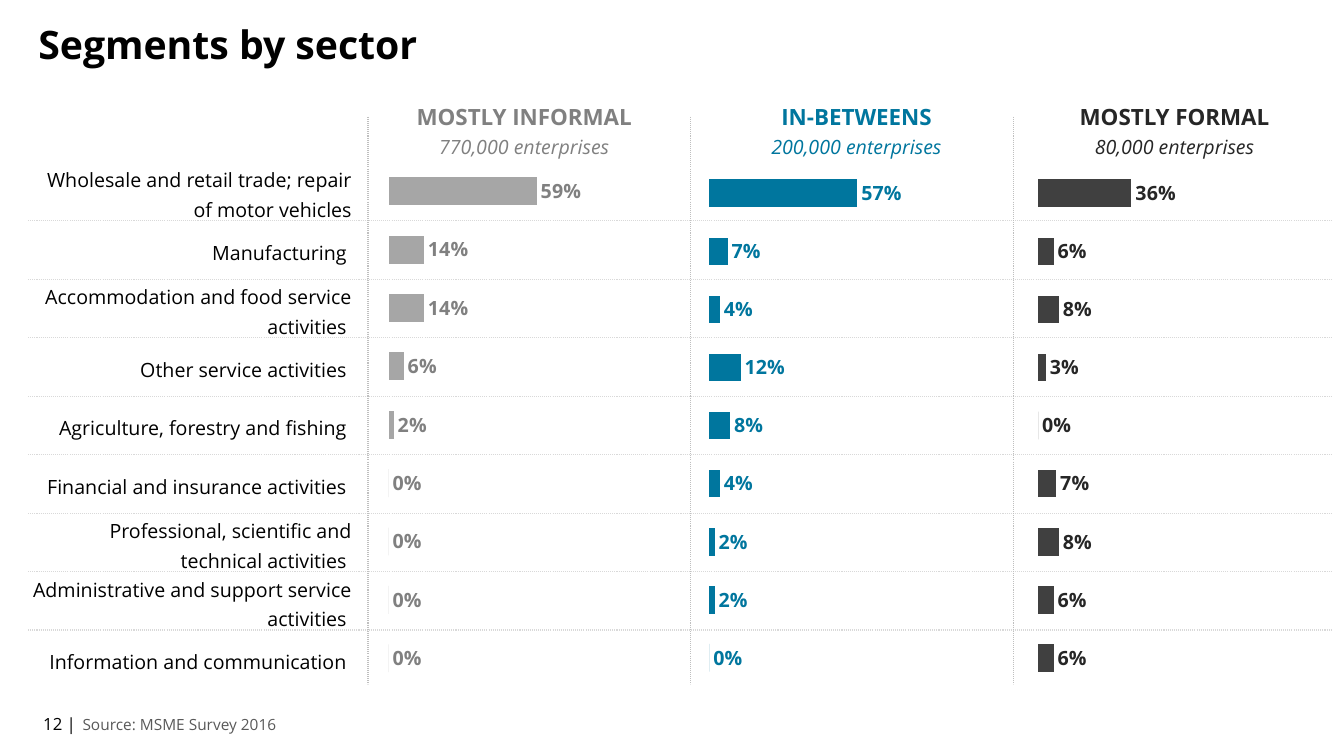
from dataclasses import dataclass

from lxml import etree
from pptx import Presentation
from pptx.chart.data import CategoryChartData
from pptx.dml.color import RGBColor
from pptx.enum.chart import XL_CHART_TYPE, XL_LABEL_POSITION
from pptx.enum.dml import MSO_LINE
from pptx.enum.shapes import MSO_CONNECTOR
from pptx.enum.text import MSO_ANCHOR, MSO_AUTO_SIZE, PP_ALIGN
from pptx.oxml import parse_xml
from pptx.oxml.ns import nsdecls, qn
from pptx.util import Inches, Pt

BAR = XL_CHART_TYPE.BAR_CLUSTERED
OUTSIDE_END = XL_LABEL_POSITION.OUTSIDE_END
DOTTED = MSO_LINE.ROUND_DOT
STRAIGHT = MSO_CONNECTOR.STRAIGHT
LEFT, CENTER, RIGHT = PP_ALIGN.LEFT, PP_ALIGN.CENTER, PP_ALIGN.RIGHT
TOP, MIDDLE = MSO_ANCHOR.TOP, MSO_ANCHOR.MIDDLE


@dataclass(frozen=True)
class Theme:
    font: str = "Open Sans"
    black: str = "000000"
    source: str = "595959"
    row_line: str = "D9D9D9"
    column_line: str = "BFBFBF"
    title_size: int = 28
    heading_size: int = 16
    body_size: int = 14
    page_size: int = 12
    source_size: int = 11
    chart_size: int = 10


theme = Theme()

SECTORS = [
    "Wholesale and retail trade; repair of motor vehicles",
    "Manufacturing ",
    "Accommodation and food service activities ",
    "Other service activities ",
    "Agriculture, forestry and fishing ",
    "Financial and insurance activities ",
    "Professional, scientific and technical activities ",
    "Administrative and support service activities ",
    "Information and communication ",
]
# Name, count, bar colour, text colour, heading (left, width),
# chart (left, top, width, height), plot area fractions, shares
SEGMENTS = [
    ("MOSTLY INFORMAL", "770,000 enterprises", "A6A6A6", "808080", (3.56, 3.28),
     (1.28, 1.31, 5.07, 5.63), (0.508, 0.053, 0.491, 0.926),
     (0.59, 0.14, 0.14, 0.06, 0.02, 0, 0, 0, 0)),
    ("IN-BETWEENS", "200,000 enterprises", "00769E", "00769E", (7.07, 2.85),
     (4.39, 1.35, 5.22, 5.6), (0.507, 0.05, 0.493, 0.926),
     (0.57, 0.07, 0.04, 0.12, 0.08, 0.04, 0.02, 0.02, 0)),
    ("MOSTLY FORMAL", "80,000 enterprises", "404040", "262626", (10.15, 3),
     (7.65, 1.35, 5.22, 5.6), (0.507, 0.05, 0.493, 0.926),
     (0.36, 0.06, 0.08, 0.03, 0, 0.07, 0.08, 0.06, 0.06)),
]
ROW_HEIGHT = 0.58


def style_font(font, size, color, bold=False, italic=False):
    font.name = theme.font
    font.size = Pt(size)
    font.color.rgb = RGBColor.from_string(color)
    font.bold = bold
    font.italic = italic


def add_dotted_line(left, top, right, bottom, color):
    line = slide.shapes.add_connector(
        STRAIGHT, Inches(left), Inches(top), Inches(right), Inches(bottom))
    line.line.color.rgb = RGBColor.from_string(color)
    line.line.width = Pt(0.75)
    line.line.dash_style = DOTTED
    etree.SubElement(line._element.spPr, qn("a:effectLst"))


presentation = Presentation()
presentation.slide_width = Inches(13.33)
presentation.slide_height = Inches(7.5)
slide = presentation.slides.add_slide(presentation.slide_layouts[5])

# Title
title = slide.shapes.title
title.left, title.top = Inches(0.28), Inches(0.15)
title.width, title.height = Inches(5.87), Inches(0.57)
title.text_frame.text = "Segments by sector"
title.text_frame.vertical_anchor = MIDDLE
title.text_frame.auto_size = MSO_AUTO_SIZE.NONE
paragraph = title.text_frame.paragraphs[0]
paragraph.alignment = LEFT
style_font(paragraph.font, theme.title_size, theme.black, bold=True)

# One chart and heading per segment
for name, count, bar_color, text_color, heading, place, plot, shares in SEGMENTS:
    chart_data = CategoryChartData(number_format="0%")
    chart_data.categories = [str(number) for number in range(1, len(SECTORS) + 1)]
    chart_data.add_series(name, shares)
    chart = slide.shapes.add_chart(
        BAR, *(Inches(length) for length in place), chart_data).chart
    style_font(chart.font, theme.chart_size, theme.black)
    chart.has_legend = False
    chart.has_title = False
    chart.category_axis.reverse_order = True
    chart.category_axis.visible = False
    chart.value_axis.minimum_scale = 0
    chart.value_axis.maximum_scale = 1
    chart.value_axis.has_major_gridlines = False
    chart.value_axis.visible = False

    bars = chart.plots[0]
    bars.gap_width = 110
    bars.vary_by_categories = False
    fill = bars.series[0].format.fill
    fill.solid()
    fill.fore_color.rgb = RGBColor.from_string(bar_color)
    bars.has_data_labels = True
    labels = bars.data_labels
    labels.show_value = True
    labels.position = OUTSIDE_END
    labels.number_format = "0%"
    labels.number_format_is_linked = False
    style_font(labels.font, theme.body_size, text_color, bold=True)

    # Fixed inner plot area
    plot_area = chart._chartSpace.chart.plotArea
    for layout in plot_area.findall(qn("c:layout")):
        plot_area.remove(layout)
    sizes = "".join(f'<c:{tag} val="{value}"/>' for tag, value in zip("xywh", plot))
    plot_area.insert(0, parse_xml(
        f'<c:layout {nsdecls("c")}><c:manualLayout><c:layoutTarget val="inner"/>'
        '<c:xMode val="edge"/><c:yMode val="edge"/>'
        f'{sizes}</c:manualLayout></c:layout>'))

    # Segment heading
    left, width = heading
    box = slide.shapes.add_textbox(Inches(left), Inches(0.92), Inches(width), Inches(0.68))
    frame = box.text_frame
    frame.word_wrap = True
    frame.auto_size = MSO_AUTO_SIZE.SHAPE_TO_FIT_TEXT
    frame.text = f"{name}\n{count}"
    for paragraph in frame.paragraphs:
        paragraph.alignment = CENTER
        paragraph.line_spacing = 1.2
    style_font(frame.paragraphs[0].font, theme.heading_size, text_color, bold=True)
    style_font(frame.paragraphs[1].font, theme.body_size, text_color, italic=True)

# Row and column rules
for row in range(len(SECTORS) - 1):
    y = 2.19 + row * ROW_HEIGHT
    add_dotted_line(0.28, y, 13.21, y, theme.row_line)
for column in range(len(SEGMENTS)):
    x = 3.65 + column * 3.2
    add_dotted_line(x, 1.16, x, 6.79, theme.column_line)

# Sector names
table = slide.shapes.add_table(
    len(SECTORS), 1, Inches(0.29), Inches(1.62), Inches(3.21),
    Inches(ROW_HEIGHT * len(SECTORS))).table
table.first_row = False
table.horz_banding = False
for row, sector in enumerate(SECTORS):
    table.rows[row].height = Inches(ROW_HEIGHT)
    cell = table.cell(row, 0)
    cell.fill.background()
    cell.vertical_anchor = MIDDLE
    cell.margin_left = cell.margin_top = cell.margin_right = Inches(0.01)
    cell.margin_bottom = 0
    cell.text = sector
    paragraph = cell.text_frame.paragraphs[0]
    paragraph.alignment = RIGHT
    paragraph.line_spacing = 1.1
    style_font(paragraph.font, theme.body_size, theme.black)
    # Invisible cell borders
    properties = cell._tc.get_or_add_tcPr()
    for position, side in enumerate(("lnL", "lnR", "lnT", "lnB")):
        properties.insert(position, parse_xml(
            f'<a:{side} {nsdecls("a")} w="0"><a:noFill/></a:{side}>'))

# Page number and source
for text, left, top, width, height, size, color in [
    ("12 |", 0.33, 7.03, 0.69, 0.4, theme.page_size, theme.black),
    ("Source: MSME Survey 2016", 0.72, 7.04, 6.81, 0.29, theme.source_size, theme.source),
]:
    box = slide.shapes.add_textbox(Inches(left), Inches(top), Inches(width), Inches(height))
    box.text_frame.word_wrap = True
    box.text_frame.vertical_anchor = TOP
    box.text_frame.text = text
    style_font(box.text_frame.paragraphs[0].font, size, color)

presentation.save("out.pptx")
